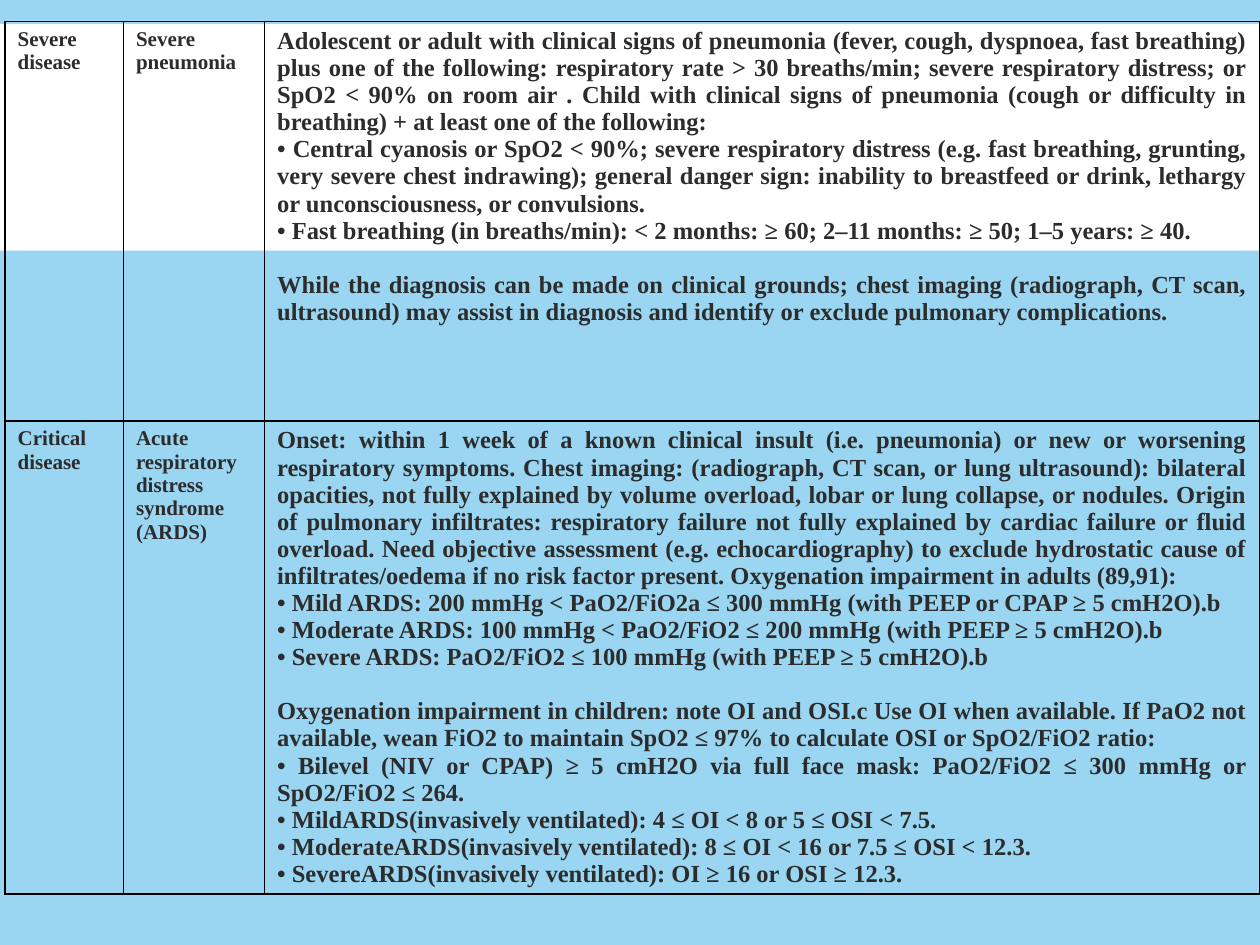
import pptx
import pptx.dml.color
import pptx.enum.shapes
import pptx.enum.text
import pptx.oxml
import pptx.oxml.ns
import pptx.util
from pptx.util import Inches, Pt

FONT = "Times New Roman"
INK, WHITE, BLACK, SKY = "2C2C2C", "FFFFFF", "000000", "9AD5F1"
LABEL_SIZE, CRITERIA_SIZE = 12, 14
SECTION_GAP = 15.5  # one line of criteria text

# Each row: severity, condition, criteria as sections of paragraphs
severities = [
    ("Severe disease", "Severe pneumonia", [
        [
            "Adolescent or adult with clinical signs of pneumonia (fever, cough, dyspnoea, fast breathing) "
            "plus one of the following: respiratory rate > 30 breaths/min; severe respiratory distress; "
            "or SpO2 < 90% on room air . Child with clinical signs of pneumonia (cough or difficulty in "
            "breathing) + at least one of the following:",
            "• Central cyanosis or SpO2 < 90%; severe respiratory distress (e.g. fast breathing, grunting, "
            "very severe chest indrawing); general danger sign: inability to breastfeed or drink, lethargy "
            "or unconsciousness, or convulsions.",
            "• Fast breathing (in breaths/min): < 2 months: ≥ 60; 2–11 months: ≥ 50; 1–5 years: ≥ 40.",
        ],
        [
            "While the diagnosis can be made on clinical grounds; chest imaging (radiograph, CT scan, "
            "ultrasound) may assist in diagnosis and identify or exclude pulmonary complications.",
        ],
    ]),
    ("Critical disease", "Acute respiratory distress syndrome (ARDS)", [
        [
            "Onset: within 1 week of a known clinical insult (i.e. pneumonia) or new or worsening "
            "respiratory symptoms. Chest imaging: (radiograph, CT scan, or lung ultrasound): bilateral "
            "opacities, not fully explained by volume overload, lobar or lung collapse, or nodules. Origin "
            "of pulmonary infiltrates: respiratory failure not fully explained by cardiac failure or fluid "
            "overload. Need objective assessment (e.g. echocardiography) to exclude hydrostatic cause of "
            "infiltrates/oedema if no risk factor present. Oxygenation impairment in adults (89,91):",
            "• Mild ARDS: 200 mmHg < PaO2/FiO2a ≤ 300 mmHg (with PEEP or CPAP ≥ 5 cmH2O).b",
            "• Moderate ARDS: 100 mmHg < PaO2/FiO2 ≤ 200 mmHg (with PEEP ≥ 5 cmH2O).b",
            "• Severe ARDS: PaO2/FiO2 ≤ 100 mmHg (with PEEP ≥ 5 cmH2O).b",
        ],
        [
            "Oxygenation impairment in children: note OI and OSI.c Use OI when available. If PaO2 not "
            "available, wean FiO2 to maintain SpO2 ≤ 97% to calculate OSI or SpO2/FiO2 ratio:",
            "• Bilevel (NIV or CPAP) ≥ 5 cmH2O via full face mask: PaO2/FiO2 ≤ 300 mmHg or "
            "SpO2/FiO2 ≤ 264.",
            "• MildARDS(invasively ventilated): 4 ≤ OI < 8 or 5 ≤ OSI < 7.5.",
            "• ModerateARDS(invasively ventilated): 8 ≤ OI < 16 or 7.5 ≤ OSI < 12.3.",
            "• SevereARDS(invasively ventilated): OI ≥ 16 or OSI ≥ 12.3.",
        ],
    ]),
]
column_widths = [0.94, 1.12, 7.9]
row_heights = [3.17, 3.75]


def color(hex_string):
    return pptx.dml.color.RGBColor.from_string(hex_string)


def write_sections(cell, sections, size):
    """Fill a cell with justified paragraphs, with a gap between sections."""
    frame = cell.text_frame
    paragraph = None
    for section in sections:
        for position, text in enumerate(section):
            first = paragraph is None
            paragraph = frame.paragraphs[0] if first else frame.add_paragraph()
            paragraph.alignment = pptx.enum.text.PP_ALIGN.JUSTIFY
            if position == 0 and not first:
                paragraph.space_before = Pt(SECTION_GAP)
            run = paragraph.add_run()
            run.text = text
            run.font.name = FONT
            run.font.size = Pt(size)
            run.font.bold = True
            run.font.color.rgb = color(INK)


def draw_borders(cell, widths):
    """Draw cell borders; widths maps L, R, T, B to points."""
    properties = cell._tc.get_or_add_tcPr()
    for side, width in widths.items():
        properties.append(pptx.oxml.parse_xml(
            f'<a:ln{side} {pptx.oxml.ns.nsdecls("a")} w="{Pt(width)}">'
            f'<a:solidFill><a:srgbClr val="{BLACK}"/></a:solidFill></a:ln{side}>'))


presentation = pptx.Presentation()
presentation.slide_width, presentation.slide_height = Inches(10), Inches(7.5)
slide = presentation.slides.add_slide(presentation.slide_layouts[6])

# Background and white band
slide.background.fill.solid()
slide.background.fill.fore_color.rgb = color(SKY)
band = slide.shapes.add_shape(pptx.enum.shapes.MSO_SHAPE.RECTANGLE,
                              0, Inches(0.19), Inches(10), Inches(1.8))
band.shadow.inherit = False
band.fill.solid()
band.fill.fore_color.rgb = color(WHITE)
band.line.fill.background()

# Severity table
table = slide.shapes.add_table(
    len(severities), len(column_widths), Inches(0.04), Inches(0.17),
    Inches(sum(column_widths)), Inches(sum(row_heights))).table
table.first_row = table.horz_banding = False
for column, width in zip(table.columns, column_widths):
    column.width = Inches(width)
for row, height, (severity, condition, criteria) in zip(table.rows, row_heights, severities):
    row.height = Inches(height)
    severity_cell, condition_cell, criteria_cell = row.cells
    write_sections(severity_cell, [[severity]], LABEL_SIZE)
    write_sections(condition_cell, [[condition]], LABEL_SIZE)
    write_sections(criteria_cell, criteria, CRITERIA_SIZE)
    draw_borders(severity_cell, {"L": 1, "R": 1, "T": 1, "B": 1})
    draw_borders(condition_cell, {"L": 1, "R": 0.5, "T": 1, "B": 1})
    draw_borders(criteria_cell, {"L": 0.5, "R": 1, "T": 1, "B": 1})
    for cell in row.cells:
        cell.fill.background()

presentation.save("out.pptx")
